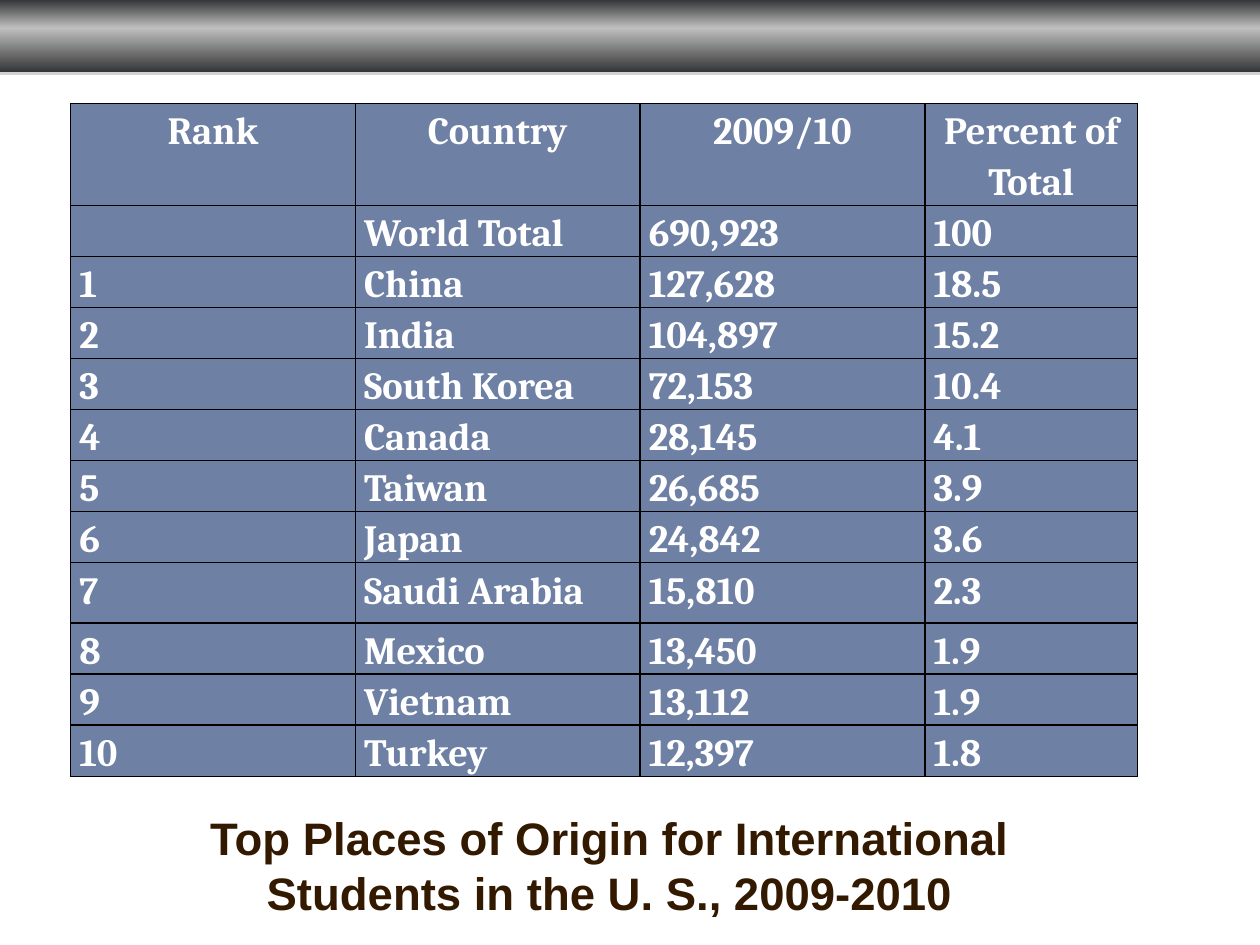
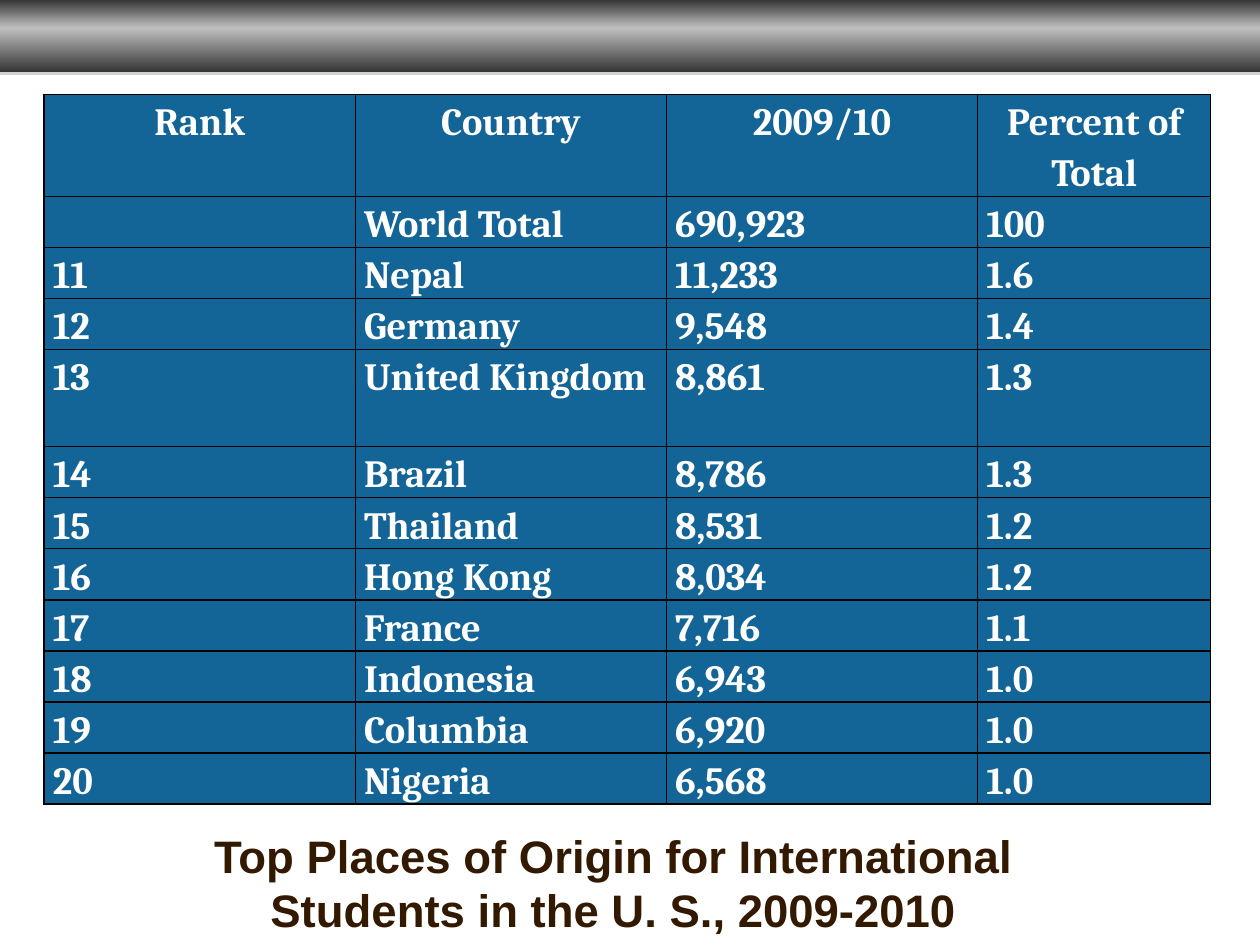
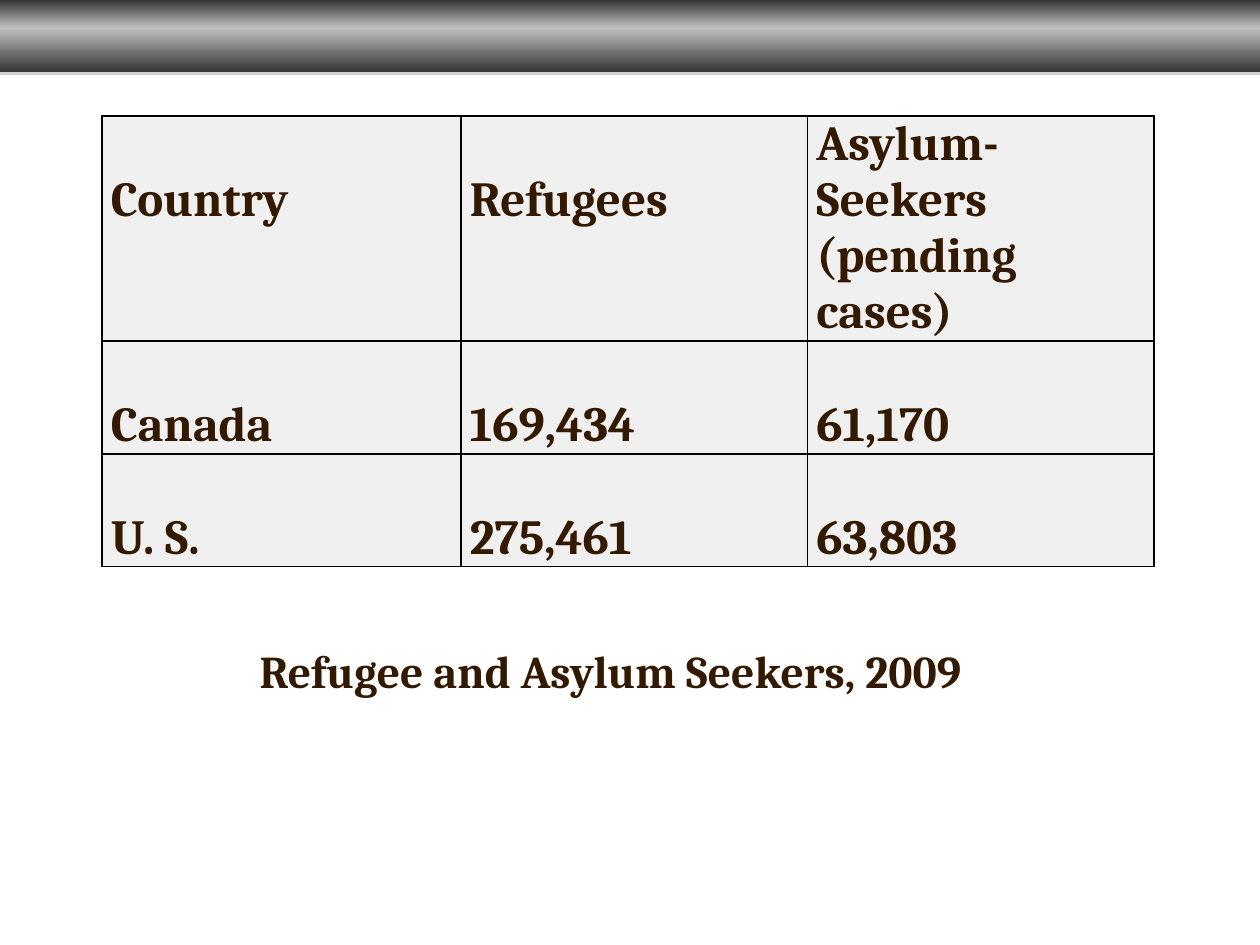
from dataclasses import dataclass

from pptx import Presentation
from pptx.dml.color import RGBColor
from pptx.enum.shapes import MSO_SHAPE
from pptx.enum.text import MSO_ANCHOR, MSO_AUTO_SIZE, PP_ALIGN
from pptx.oxml import parse_xml
from pptx.oxml.ns import qn
from pptx.util import Inches, Pt

RECT = MSO_SHAPE.RECTANGLE
TOP = MSO_ANCHOR.TOP
NO_FIT = MSO_AUTO_SIZE.NONE
LEFT, CENTER = PP_ALIGN.LEFT, PP_ALIGN.CENTER
NS = 'xmlns:a="http://schemas.openxmlformats.org/drawingml/2006/main"'
TITLE_ONLY = 5


@dataclass(frozen=True)
class Theme:
    brown: str = "321900"
    white: str = "FFFFFF"
    navy: str = "002060"
    blue: str = "136497"
    gray: str = "E6E6E6"
    border: str = "000000"
    band_stops: tuple = ((0, "353637"), (39, "BFBFBF"), (100, "353637"))
    band_shadow: str = "808080"
    serif: str = "Cambria"
    sans: str = "Arial"
    title_size: int = 26
    rank_size: int = 22
    refugee_size: int = 28
    tint: int = 57  # opacity of tinted cells, in percent


THEME = Theme()


def set_all(obj, values):
    for name, value in values.items():
        setattr(obj, name, value)


def font_format(name, size, color):
    return {"name": name, "size": Pt(size), "bold": True, "color": color}


class Deck:
    def __init__(self, theme):
        self.theme = theme
        self.prs = Presentation()
        set_all(self.prs, {"slide_width": Inches(10), "slide_height": Inches(7.5)})
        self.layout = self.prs.slide_layouts[TITLE_ONLY]
        self.s = None

    def add_slide(self):
        first = self.s is None
        self.s = self.prs.slides.add_slide(self.layout)
        if first:
            self.add_band()

    def add_band(self):
        """Draw the top band and move it to the layout that all slides share."""
        t = self.theme
        sp = self.s.shapes.add_shape(RECT, 0, 0, Inches(10), Inches(0.57))
        sp.line.fill.background()
        stops = "".join(
            f'<a:gs pos="{pos * 1000}"><a:srgbClr val="{color}"/></a:gs>'
            for pos, color in t.band_stops)
        spPr = sp._element.spPr
        spPr.find(qn("a:prstGeom")).addnext(parse_xml(
            f'<a:gradFill {NS}><a:gsLst>{stops}</a:gsLst>'
            '<a:lin ang="5400000" scaled="0"/></a:gradFill>'))
        spPr.append(parse_xml(
            f'<a:effectLst {NS}><a:outerShdw blurRad="0" dist="{Pt(1.8)}" '
            f'dir="5400000" rotWithShape="0"><a:srgbClr val="{t.band_shadow}">'
            '<a:alpha val="35000"/></a:srgbClr></a:outerShdw></a:effectLst>'))
        self.layout.shapes._spTree.insert(2, sp._element)

    def add_run(self, p, text, font):
        r = p.add_run()
        r.text = text
        set_all(r.font, {k: v for k, v in font.items() if k != "color"})
        r.font.color.rgb = RGBColor.from_string(font["color"])

    def add_title(self, text, x, y, w, h, font_name, align):
        t = self.theme
        sp = self.s.shapes.title
        set_all(sp, {"left": Inches(x), "top": Inches(y),
                     "width": Inches(w), "height": Inches(h)})
        tf = sp.text_frame
        set_all(tf, {"word_wrap": True, "auto_size": NO_FIT,
                     "vertical_anchor": TOP})
        p = tf.paragraphs[0]
        p.alignment = align
        self.add_run(p, text, font_format(font_name, t.title_size, t.brown))

    def add_table(self, rows, x, y, widths, heights, fill, font, para_format,
                  opacity=100):
        """para_format(row, column) gives the paragraph settings of a cell."""
        frame = self.s.shapes.add_table(
            len(rows), len(widths), Inches(x), Inches(y),
            Inches(sum(widths)), Inches(sum(heights)))
        table = frame.table
        set_all(table, {"first_row": False, "horz_banding": False})
        for column, width in zip(table.columns, widths):
            column.width = Inches(width)
        for row, height in zip(table.rows, heights):
            row.height = Inches(height)
        for i, values in enumerate(rows):
            for j, text in enumerate(values):
                cell = table.cell(i, j)
                self.style_cell(cell, fill, opacity)
                if text:
                    p = cell.text_frame.paragraphs[0]
                    set_all(p, para_format(i, j))
                    self.add_run(p, text, font)

    def style_cell(self, cell, fill, opacity):
        set_all(cell, {"margin_left": Inches(0.07), "margin_right": Inches(0.07),
                       "margin_top": 0, "margin_bottom": 0})
        cell.fill.solid()
        cell.fill.fore_color.rgb = RGBColor.from_string(fill)
        tcPr = cell._tc.tcPr
        if opacity < 100:
            color = tcPr.find(f'{qn("a:solidFill")}/{qn("a:srgbClr")}')
            color.append(parse_xml(f'<a:alpha {NS} val="{opacity * 1000}"/>'))
        for i, side in enumerate("LRTB"):
            tcPr.insert(i, parse_xml(
                f'<a:ln{side} {NS} w="{Pt(1)}"><a:solidFill>'
                f'<a:srgbClr val="{self.theme.border}"/></a:solidFill></a:ln{side}>'))


# Content
RANK_TITLE = "Top Places of Origin for International Students in the U. S., 2009-2010"
RANK_HEAD = [
    ("Rank", "Country", "2009/10", "Percent of Total"),
    ("", "World Total", "690,923", "100"),
]
TOP_TEN = [
    ("China", "127,628", "18.5"),
    ("India", "104,897", "15.2"),
    ("South Korea", "72,153", "10.4"),
    ("Canada", "28,145", "4.1"),
    ("Taiwan", "26,685", "3.9"),
    ("Japan", "24,842", "3.6"),
    ("Saudi Arabia", "15,810", "2.3"),
    ("Mexico", "13,450", "1.9"),
    ("Vietnam", "13,112", "1.9"),
    ("Turkey", "12,397", "1.8"),
]
NEXT_TEN = [
    ("Nepal", "11,233", "1.6"),
    ("Germany", "9,548", "1.4"),
    ("United Kingdom", "8,861", "1.3"),
    ("Brazil", "8,786", "1.3"),
    ("Thailand", "8,531", "1.2"),
    ("Hong Kong", "8,034", "1.2"),
    ("France", "7,716", "1.1"),
    ("Indonesia", "6,943", "1.0"),
    ("Columbia", "6,920", "1.0"),
    ("Nigeria", "6,568", "1.0"),
]
REFUGEES = [
    ("Country", "Refugees", "Asylum-Seekers (pending cases)"),
    ("Canada", "169,434", "61,170"),
    ("U. S.", "275,461", "63,803"),
]


def rank_para(i, j):
    return {"line_spacing": 1.15, "alignment": LEFT if i else CENTER}


def refugee_para(i, j):
    if (i, j) == (0, 2):  # the long heading is set single-spaced
        return {}
    return {"line_spacing": 2.0, "space_after": Pt(10)}


def add_rank_slide(deck, countries, first_rank, table, title_at):
    t = deck.theme
    rows = RANK_HEAD + [(str(rank), *country)
                        for rank, country in enumerate(countries, first_rank)]
    deck.add_slide()
    deck.add_table(rows, font=font_format(t.serif, t.rank_size, t.white),
                   para_format=rank_para, **table)
    deck.add_title(RANK_TITLE, *title_at, 7.64, 0.98, t.sans, CENTER)


def main():
    t = THEME
    deck = Deck(t)

    # Ranks 1 to 10
    add_rank_slide(deck, TOP_TEN, 1, {
        "x": 0.56, "y": 0.82, "widths": [2.26] * 3 + [1.69],
        "heights": [0.77, 0.4] + [0.37] * 6 + [0.48] + [0.37] * 3,
        "fill": t.navy, "opacity": t.tint}, (1.02, 6.38))

    # Ranks 11 to 20
    add_rank_slide(deck, NEXT_TEN, 11, {
        "x": 0.35, "y": 0.75, "widths": [2.47] * 3 + [1.85],
        "heights": [0.79] + [0.39] * 3 + [0.77] + [0.39] * 7,
        "fill": t.blue}, (1.05, 6.52))

    # Refugees and asylum seekers
    deck.add_slide()
    deck.add_table(REFUGEES, 0.81, 0.92, [2.85, 2.75, 2.75], [1.43, 0.61, 0.7],
                   t.gray, font_format(t.serif, t.refugee_size, t.brown),
                   refugee_para, t.tint)
    deck.add_title("Refugee and Asylum Seekers, 2009", 1.96, 5.05, 6, 0.54,
                   t.serif, LEFT)

    deck.prs.save("out.pptx")


if __name__ == "__main__":
    main()
